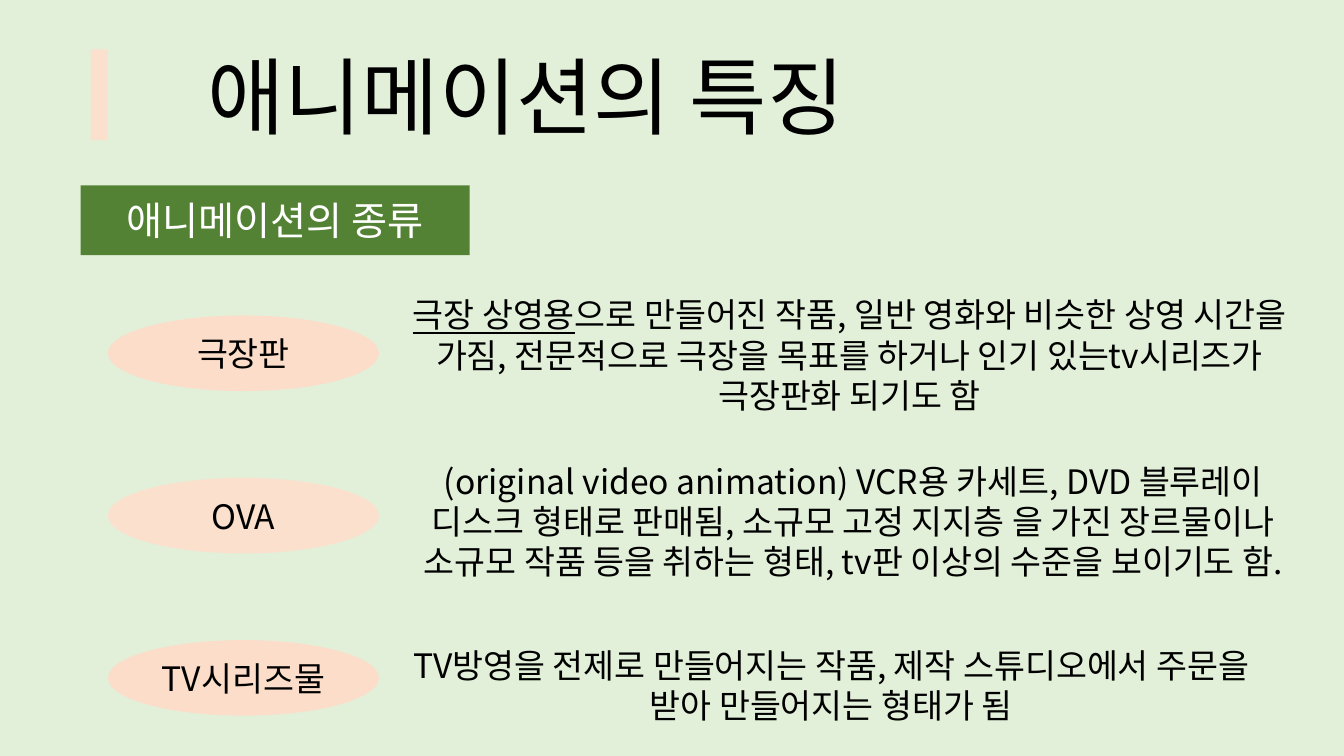
from dataclasses import dataclass

from lxml.etree import SubElement
from pptx import Presentation
from pptx.dml.color import RGBColor
from pptx.enum.shapes import MSO_SHAPE
from pptx.enum.text import MSO_ANCHOR, PP_ALIGN
from pptx.oxml.ns import qn
from pptx.util import Inches, Pt


@dataclass(frozen=True)
class Theme:
    font: str = "Noto Sans CJK KR"
    back: str = "E2F0D9"
    green: str = "548235"
    peach: str = "FBE0CD"
    coral: str = "FBDDC9"
    ink: str = "000000"
    white: str = "FFFFFF"
    title: int = 60
    head: int = 28
    body: int = 24


class Deck:
    cols, rows = 40, 30

    def __init__(self, theme):
        self.theme = theme
        self.show = Presentation()
        self.show.slide_width = Inches(13.33)
        self.show.slide_height = Inches(7.5)
        self.slide = self.show.slides.add_slide(self.show.slide_layouts[6])
        self.paint(self.slide.background.fill, theme.back)

    def paint(self, fill, color):
        fill.solid()
        fill.fore_color.rgb = RGBColor.from_string(color)

    def place(self, x, y, wide, high):
        col = self.show.slide_width / self.cols
        row = self.show.slide_height / self.rows
        return [round(n) for n in (x * col, y * row, wide * col, high * row)]

    def label(self, shape, runs, size, color, anchor, space=None):
        frame = shape.text_frame
        frame.word_wrap = True
        frame.vertical_anchor = anchor
        para = frame.paragraphs[0]
        para.alignment = PP_ALIGN.CENTER
        para.line_spacing = space
        for words, line in runs:
            run = para.add_run()
            run.text = words
            font = run.font
            font.size = Pt(size)
            font.name = self.theme.font
            font.underline = line
            font.color.rgb = RGBColor.from_string(color)
            SubElement(run._r.get_or_add_rPr(), qn("a:ea"), typeface=self.theme.font)

    def shape(self, kind, box, fill, words="", size=None, color=None):
        item = self.slide.shapes.add_shape(kind, *self.place(*box))
        item.shadow.inherit = False
        self.paint(item.fill, fill)
        item.line.fill.background()
        if words:
            self.label(item, [(words, False)], size, color, MSO_ANCHOR.MIDDLE)

    def text(self, box, runs, size, anchor=MSO_ANCHOR.TOP, space=None):
        item = self.slide.shapes.add_textbox(*self.place(*box))
        self.label(item, runs, size, self.theme.ink, anchor, space)

    def save(self):
        self.show.save("out.pptx")


def main():
    theme = Theme()
    deck = Deck(theme)
    deck.text((0.87, 1.76, 29, 4.24), [(" 애니메이션의 특징", False)],
              theme.title, MSO_ANCHOR.BOTTOM, 0.9)
    deck.shape(MSO_SHAPE.RECTANGLE, (2.7, 1.96, 0.51, 3.6), theme.peach)
    deck.shape(MSO_SHAPE.RECTANGLE, (2.4, 7.36, 11.58, 2.76), theme.green,
               "애니메이션의 종류", theme.head, theme.white)

    types = [
        ("극장판", theme.coral, (11.48, 26.8, 5.24), [
            ("극장 상영용", True),
            ("으로 만들어진 작품, 일반 영화와 비슷한 상영 시간을 가짐, "
             "전문적으로 극장을 목표를 하거나 인기 있는tv시리즈가 "
             "극장판화 되기도 함", False)]),
        ("OVA", theme.peach, (18.08, 27.03, 6.88), [
            ("(original video animation) VCR용 카세트, DVD 블루레이 디스크 "
             "형태로 판매됨, 소규모 고정 지지층 을 가진 장르물이나 소규모 작품 "
             "등을 취하는 형태, tv판 이상의 수준을 보이기도 함.", False)]),
        ("TV시리즈물", theme.coral, (25.4, 25.71, 3.64), [
            ("TV방영을 전제로 만들어지는 작품, 제작 스튜디오에서 "
             "주문을 받아 만들어지는 형태가 됨", False)]),
    ]
    for step, (name, fill, (top, wide, high), runs) in enumerate(types):
        deck.shape(MSO_SHAPE.OVAL, (3.21, 12.52 + step * 6.44, 8.07, 3),
                   fill, name, theme.body, theme.ink)
        deck.text((11.88, top, wide, high), runs, theme.body)
    deck.save()


if __name__ == "__main__":
    main()
